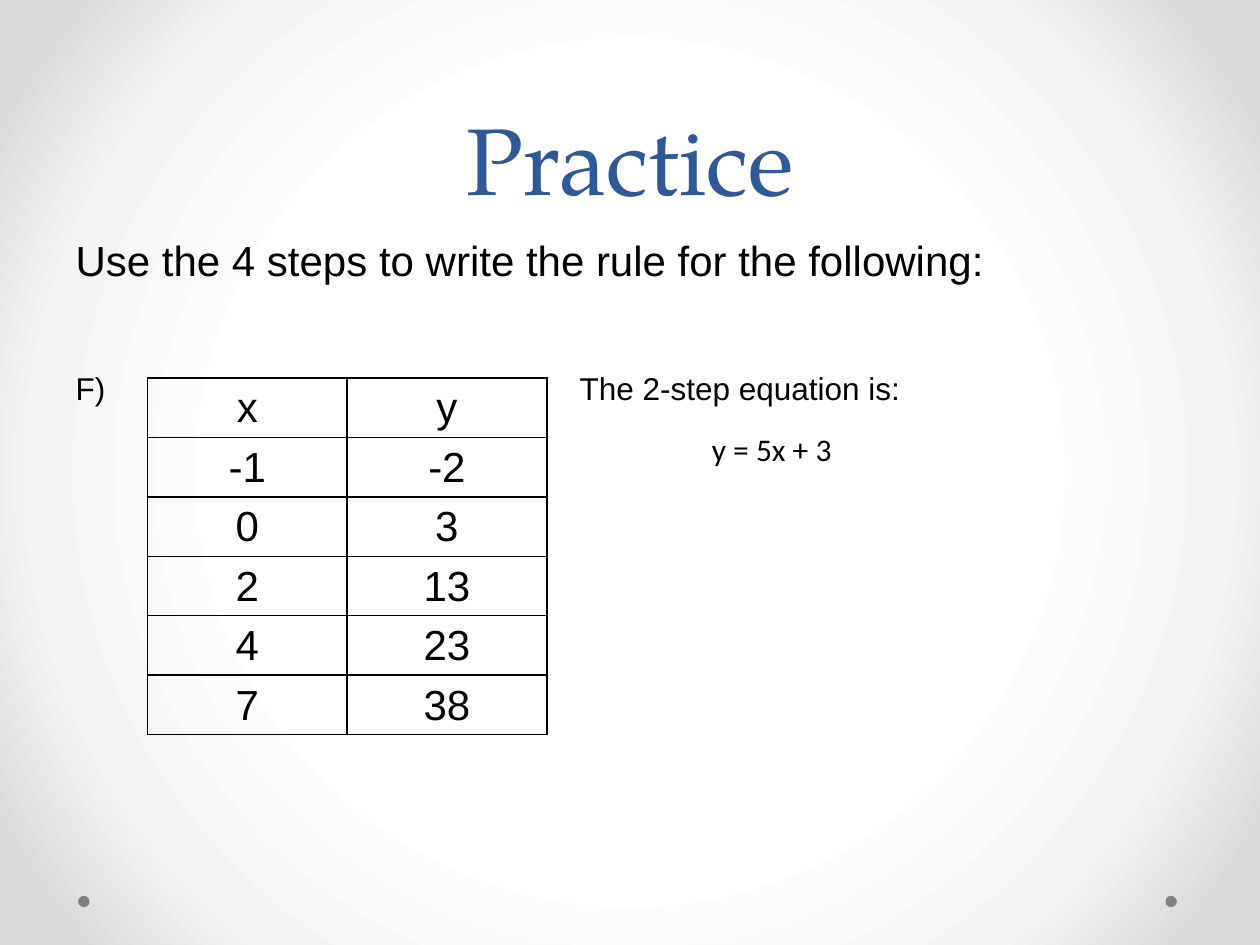
from lxml import etree
from pptx import Presentation
from pptx.dml.color import RGBColor
from pptx.enum.shapes import MSO_SHAPE
from pptx.enum.text import MSO_ANCHOR, MSO_AUTO_SIZE, PP_ALIGN
from pptx.oxml import parse_xml
from pptx.oxml.ns import qn
from pptx.util import Inches, Pt

OVAL = MSO_SHAPE.OVAL
BOTTOM, TOP = MSO_ANCHOR.BOTTOM, MSO_ANCHOR.TOP
NO_FIT = MSO_AUTO_SIZE.NONE
LEFT, CENTER = PP_ALIGN.LEFT, PP_ALIGN.CENTER
NS = 'xmlns:a="http://schemas.openxmlformats.org/drawingml/2006/main"'
STOPS = [(50, "FFFFFF"), (76, "F4F4F4"), (92, "DADADA")]
ROWS = [("x", "y"), (-1, -2), (0, 3), (2, 13), (4, 23), (7, 38)]


def color(code):
    return RGBColor.from_string(code)


def style(para, size, font="Arial", code="000000"):
    for run in para.runs:
        run.font.size = Pt(size)
        run.font.name = font
        run.font.color.rgb = color(code)


def place(shape, left, top, width, height, anchor):
    shape.left, shape.top = Inches(left), Inches(top)
    shape.width, shape.height = Inches(width), Inches(height)
    frame = shape.text_frame
    frame.auto_size = NO_FIT
    frame.word_wrap = True
    frame.vertical_anchor = anchor
    return frame


def paint_back(slide):
    fill = slide.background.fill
    fill.solid()
    fill.fore_color.rgb = color("FFFFFF")
    solid = slide.background._cSld.find(".//" + qn("a:solidFill"))
    stops = "".join(
        f'<a:gs pos="{spot * 1000}"><a:srgbClr val="{code}"/></a:gs>'
        for spot, code in STOPS
    )
    grad = parse_xml(
        f'<a:gradFill {NS} rotWithShape="1"><a:gsLst>{stops}</a:gsLst>'
        '<a:path path="circle"><a:fillToRect l="50000" t="50000" '
        'r="50000" b="50000"/></a:path></a:gradFill>'
    )
    solid.getparent().replace(solid, grad)


def add_dot(slide, left):
    dot = slide.shapes.add_shape(
        OVAL, Inches(left), Inches(7.11), Inches(0.09), Inches(0.09)
    )
    dot.shadow.inherit = False
    dot.fill.solid()
    dot.fill.fore_color.rgb = color("808080")
    dot.line.fill.background()


def set_title(slide):
    frame = place(slide.shapes.title, 0.5, 0, 9, 1.75, BOTTOM)
    frame.text = "Practice"
    para = frame.paragraphs[0]
    para.alignment = CENTER
    para.line_spacing = Pt(58)
    style(para, 54, "TeX Gyre Pagella", "2F5897")


def add_line(para, text, size, font="Arial", indent=0, before=0, tab=1):
    para.text = text
    props = para._p.get_or_add_pPr()
    props.set("marL", str(Inches(indent)))
    props.set("indent", "0")
    props.set("defTabSz", str(Inches(tab)))
    etree.SubElement(props, qn("a:buNone"))
    para.alignment = LEFT
    para.line_spacing = 1.15
    para.space_before = Pt(before)
    para.space_after = Pt(10)
    style(para, size, font)


def set_body(slide):
    frame = place(slide.placeholders[1], 0.5, 1.75, 9, 4.95, TOP)
    add_line(frame.paragraphs[0],
             "Use the 4 steps to write the rule for the following:", 24)
    add_line(frame.add_paragraph(), "F)\tThe 2-step equation is:", 18,
             before=35, tab=4)
    add_line(frame.add_paragraph(), "y = 5x + 3", 18, "Calibri", indent=5.05)


def add_edges(cell):
    props = cell._tc.get_or_add_tcPr()
    for spot, side in enumerate(("lnL", "lnR", "lnT", "lnB")):
        props.insert(spot, parse_xml(
            f'<a:{side} {NS} w="{Pt(1)}"><a:solidFill>'
            f'<a:srgbClr val="000000"/></a:solidFill></a:{side}>'
        ))


def fill_cell(cell, value):
    cell.fill.background()
    cell.margin_left = cell.margin_right = Inches(0.07)
    cell.margin_top = cell.margin_bottom = 0
    cell.text_frame.text = str(value)
    para = cell.text_frame.paragraphs[0]
    para.alignment = CENTER
    para.line_spacing = 1.15
    style(para, 24)
    add_edges(cell)


def add_grid(slide):
    grid = slide.shapes.add_table(
        len(ROWS), 2, Inches(1.17), Inches(3), Inches(3.17), Inches(2.83)
    ).table
    grid.first_row = grid.horz_banding = False
    for row, values in zip(grid.rows, ROWS):
        for cell, value in zip(row.cells, values):
            fill_cell(cell, value)


def main():
    deck = Presentation()
    deck.slide_width, deck.slide_height = Inches(10), Inches(7.5)
    slide = deck.slides.add_slide(deck.slide_layouts[1])
    paint_back(slide)
    for left in (9.25, 0.62):
        add_dot(slide, left)
    set_title(slide)
    set_body(slide)
    add_grid(slide)
    deck.save("out.pptx")


if __name__ == "__main__":
    main()
